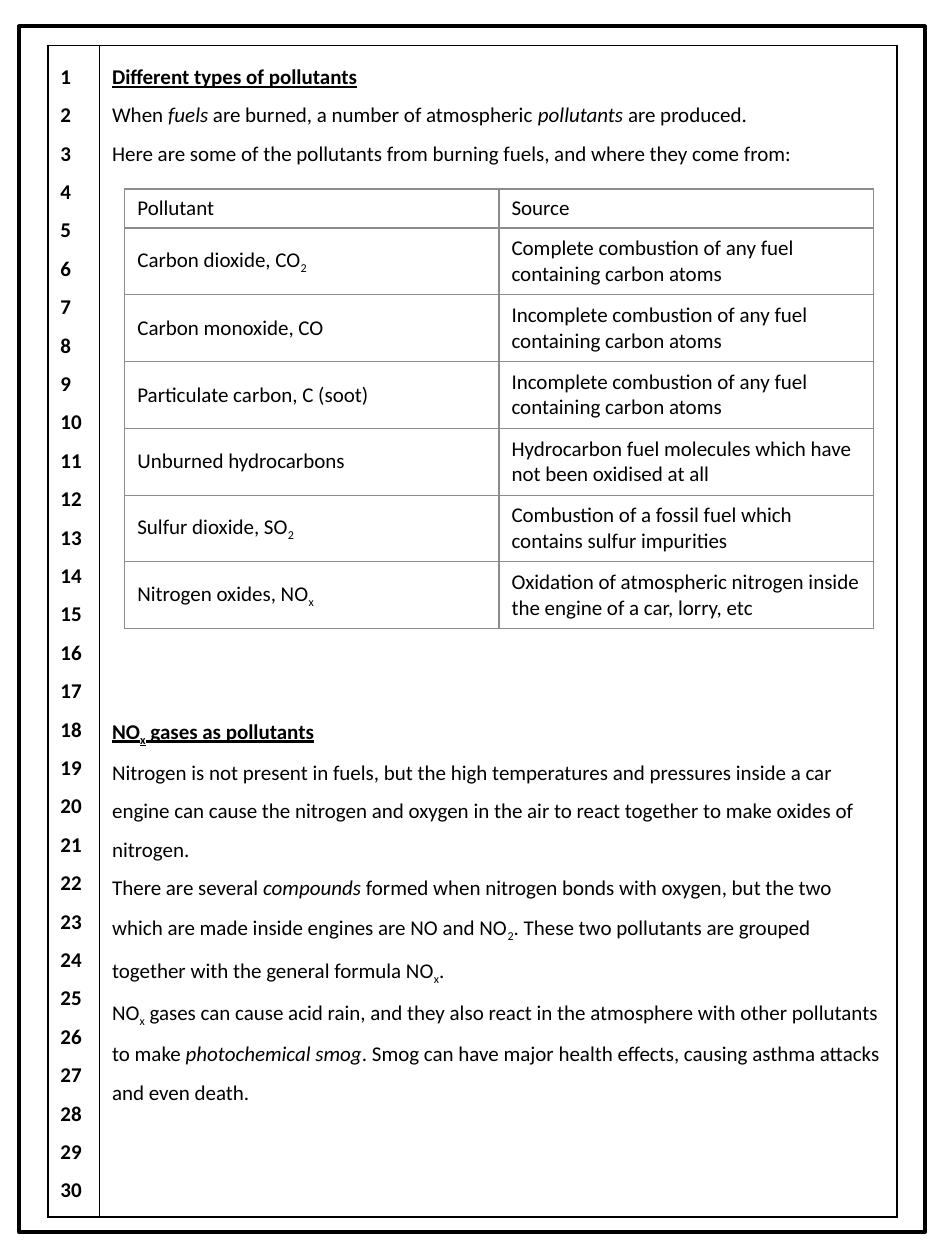
from pptx import Presentation
from pptx.dml.color import RGBColor
from pptx.enum.shapes import MSO_SHAPE
from pptx.enum.text import MSO_ANCHOR
from pptx.oxml.ns import qn
from pptx.util import Inches, Pt
from lxml.etree import SubElement

BLACK = RGBColor(0x00, 0x00, 0x00)
GREY = RGBColor(0x8A, 0x8C, 0x8E)
FONT = "Calibri"
LINE_PITCH = 21.97  # points taken by one line of 12 pt text at 1.5 spacing
LINE_COUNT = 30
TABLE_LINES = 14  # numbered lines left free for the pollutant table

# In the texts, *...* is italic and ~...~ is subscript.
INTRODUCTION = [
    "When *fuels* are burned, a number of atmospheric *pollutants* are produced.",
    "Here are some of the pollutants from burning fuels, and where they come from:",
]
NOX_TEXT = [
    "Nitrogen is not present in fuels, but the high temperatures and pressures "
    "inside a car engine can cause the nitrogen and oxygen in the air to react "
    "together to make oxides of nitrogen.",
    "There are several *compounds* formed when nitrogen bonds with oxygen, but the "
    "two which are made inside engines are NO and NO~2~. These two pollutants are "
    "grouped together with the general formula NO~x~.",
    "NO~x~ gases can cause acid rain, and they also react in the atmosphere with "
    "other pollutants to make *photochemical smog*. Smog can have major health "
    "effects, causing asthma attacks and even death.",
]
POLLUTANTS = [
    ("Pollutant", "Source"),
    ("Carbon dioxide, CO~2~",
     "Complete combustion of any fuel containing carbon atoms"),
    ("Carbon monoxide, CO",
     "Incomplete combustion of any fuel containing carbon atoms"),
    ("Particulate carbon, C (soot)",
     "Incomplete combustion of any fuel containing carbon atoms"),
    ("Unburned hydrocarbons",
     "Hydrocarbon fuel molecules which have not been oxidised at all"),
    ("Sulfur dioxide, SO~2~",
     "Combustion of a fossil fuel which contains sulfur impurities"),
    ("Nitrogen oxides, NO~x~",
     "Oxidation of atmospheric nitrogen inside the engine of a car, lorry, etc"),
]


def add_text(frame, text, bold=False, underline=False, spacing=None, before=0):
    """Add one paragraph, using the empty first one if it is still free."""
    paragraph = frame.paragraphs[0]
    if paragraph.runs:
        paragraph = frame.add_paragraph()
    if spacing:
        paragraph.line_spacing = spacing
    if before:
        paragraph.space_before = Pt(before)
    for i, phrase in enumerate(text.split("*")):
        for j, piece in enumerate(phrase.split("~")):
            if not piece:
                continue
            run = paragraph.add_run()
            run.text = piece
            font = run.font
            font.name, font.size = FONT, Pt(12)
            font.color.rgb = BLACK
            font.bold, font.underline = bold, underline
            font.italic = i % 2 == 1
            if j % 2 == 1:
                run._r.get_or_add_rPr().set("baseline", "-25000")


def set_borders(cell, color, width):
    properties = cell._tc.get_or_add_tcPr()
    for position, side in enumerate(("lnL", "lnR", "lnT", "lnB")):
        line = properties.makeelement(qn(f"a:{side}"), {"w": str(Pt(width))})
        fill = SubElement(line, qn("a:solidFill"))
        SubElement(fill, qn("a:srgbClr"), val=str(color))
        properties.insert(position, line)


def add_grid(slide, left, top, columns, rows, color, width):
    """Add a plain table with unfilled cells and one kind of border."""
    table = slide.shapes.add_table(
        len(rows), len(columns), Inches(left), Inches(top),
        Inches(sum(columns)), Inches(sum(rows))).table
    table.first_row = table.horz_banding = False
    for column, size in zip(table.columns, columns):
        column.width = Inches(size)
    for row, size in zip(table.rows, rows):
        row.height = Inches(size)
    for cell in table.iter_cells():
        cell.fill.background()
        set_borders(cell, color, width)
    return table


def add_page_frame(slide):
    frame = slide.shapes.add_shape(
        MSO_SHAPE.RECTANGLE, Inches(0.15), Inches(0.21), Inches(7.19), Inches(9.57))
    frame.shadow.inherit = False
    frame.fill.background()
    frame.line.color.rgb = BLACK
    frame.line.width = Pt(2.25)


def add_reading_text(slide):
    table = add_grid(slide, 0.38, 0.36, [0.41, 6.33], [9.3], BLACK, 1)
    numbers = table.cell(0, 0).text_frame
    for number in range(1, LINE_COUNT + 1):
        add_text(numbers, str(number), bold=True, spacing=1.5)

    body = table.cell(0, 1).text_frame
    add_text(body, "Different types of pollutants",
             bold=True, underline=True, spacing=1.5)
    for text in INTRODUCTION:
        add_text(body, text, spacing=1.5)
    add_text(body, "NO~x~ gases as pollutants", bold=True, underline=True,
             spacing=1.5, before=TABLE_LINES * LINE_PITCH)
    for text in NOX_TEXT:
        add_text(body, text, spacing=1.5)


def add_pollutant_table(slide):
    heights = [0.31] + [0.53] * (len(POLLUTANTS) - 1)
    table = add_grid(slide, 0.99, 1.5, [2.97, 2.97], heights, GREY, 0.75)
    for row, texts in zip(table.rows, POLLUTANTS):
        for cell, text in zip(row.cells, texts):
            cell.vertical_anchor = MSO_ANCHOR.MIDDLE
            add_text(cell.text_frame, text)


def main():
    presentation = Presentation()
    presentation.slide_width = Inches(7.5)
    presentation.slide_height = Inches(10)
    slide = presentation.slides.add_slide(presentation.slide_layouts[6])

    add_page_frame(slide)
    add_reading_text(slide)
    add_pollutant_table(slide)

    presentation.save("out.pptx")


if __name__ == "__main__":
    main()
